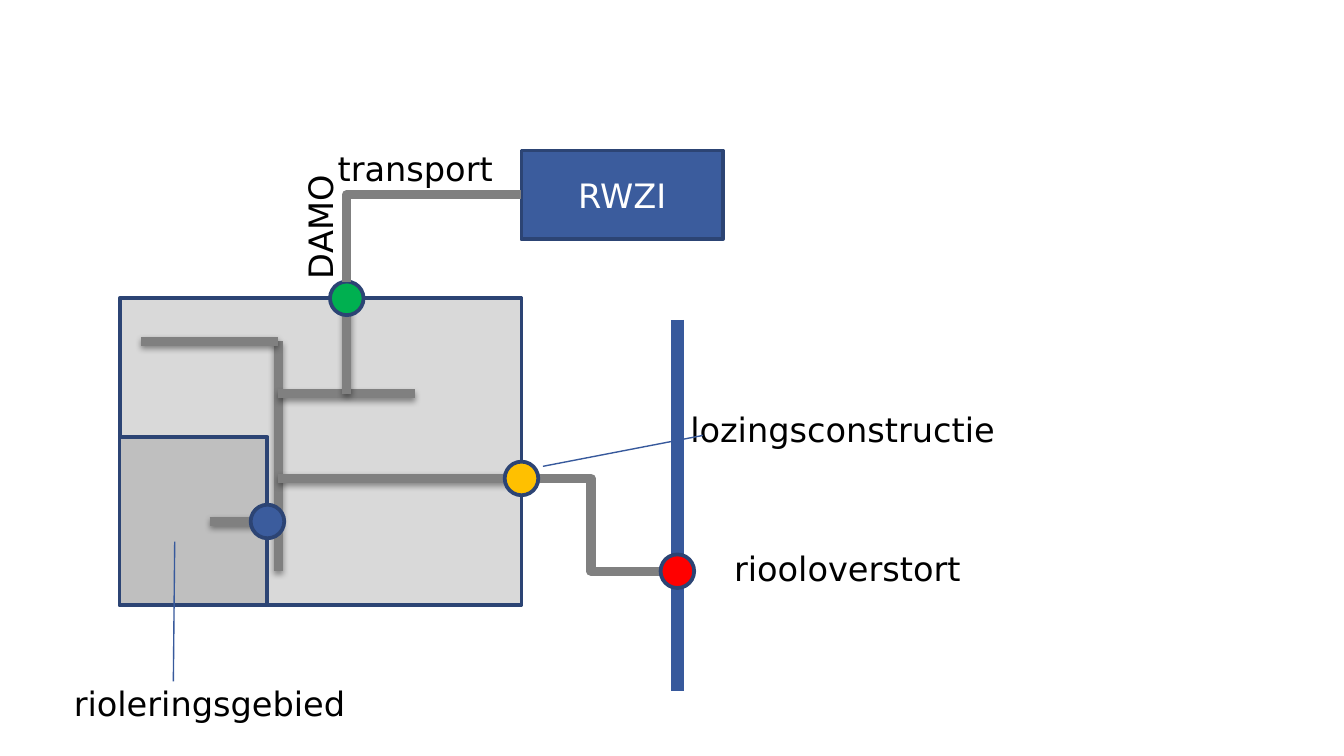
from lxml import etree
from pptx import Presentation
from pptx import util as u
from pptx.dml.color import RGBColor
from pptx.enum import shapes, text
from pptx.oxml.ns import qn

COLOURS = {
    "area": "D9D9D9", "subarea": "BFBFBF", "outline": "2C4474", "pipe": "808080",
    "water": "37599C", "blue": "3B5C9D", "yellow": "FFC000", "red": "FF0000",
    "green": "00B050", "black": "000000", "white": "FFFFFF",
}
FONT = "DejaVu Sans"
NODE_SIZE = 0.25
PIPE_WIDTH = 5


def colour(name):
    """Return the named colour as an RGBColor."""
    return RGBColor.from_string(COLOURS[name])


def write(shape, wording, font_colour):
    """Put one centred line of text in a shape."""
    paragraph = shape.text_frame.paragraphs[0]
    paragraph.text = wording
    paragraph.alignment = text.PP_ALIGN.CENTER
    font = paragraph.runs[0].font
    font.name, font.size = FONT, u.Pt(18)
    font.color.rgb = colour(font_colour)


def add_block(slide, kind, box, fill):
    """Add a filled shape with the dark blue outline."""
    shape = slide.shapes.add_shape(kind, *map(u.Inches, box))
    shape.shadow.inherit = False
    shape.fill.solid()
    shape.fill.fore_color.rgb = colour(fill)
    shape.line.color.rgb = colour("outline")
    shape.line.width = u.Pt(2)
    return shape


def add_node(slide, x, y, fill):
    """Add a round node centred on a point."""
    box = (x - NODE_SIZE / 2, y - NODE_SIZE / 2, NODE_SIZE, NODE_SIZE)
    add_block(slide, shapes.MSO_SHAPE.FLOWCHART_CONNECTOR, box, fill)


def add_line(slide, start, end, line_colour, width, shadow=False,
             kind=shapes.MSO_CONNECTOR.STRAIGHT):
    """Add a connector, with a soft shadow below it if asked."""
    connector = slide.shapes.add_connector(kind, *map(u.Inches, (*start, *end)))
    connector.line.color.rgb = colour(line_colour)
    connector.line.width = u.Pt(width)
    effects = etree.SubElement(connector._element.spPr, qn("a:effectLst"))
    if shadow:
        outer = etree.SubElement(effects, qn("a:outerShdw"), blurRad="40000",
                                 dist="20000", dir="5400000", rotWithShape="0")
        shade = etree.SubElement(outer, qn("a:srgbClr"), val=COLOURS["black"])
        etree.SubElement(shade, qn("a:alpha"), val="38000")
    return connector


def add_label(slide, wording, left, top, width=3, rotation=0):
    """Add a centred text label."""
    label = slide.shapes.add_textbox(*map(u.Inches, (left, top, width, 0.4)))
    label.text_frame.word_wrap = True
    label.rotation = rotation
    write(label, wording, "black")


def add_overflow(slide, left, top, width, height):
    """Draw the pipe from the sewer area to the overflow on the watercourse."""
    water_x = left + width
    pipe_y, overflow_y = top + 1.18, top + 1.87
    add_line(slide, (left, pipe_y), (water_x - NODE_SIZE / 2, overflow_y), "pipe",
             PIPE_WIDTH, kind=shapes.MSO_CONNECTOR.ELBOW)
    add_line(slide, (water_x, top), (water_x, top + height), "water", 7)
    add_node(slide, water_x, overflow_y, "red")
    add_label(slide, "riooloverstort", water_x + 0.02, overflow_y - 0.22, 2.49)


def add_sewer_area(slide, left, top, width, height):
    """Draw the sewer area with its subarea, pipes and nodes."""
    rectangle = shapes.MSO_SHAPE.RECTANGLE
    right, bottom = left + width, top + height
    sub_width, sub_height = 1.1, 1.25
    add_block(slide, rectangle, (left, top, width, height), "area")
    add_block(slide, rectangle,
              (left, bottom - sub_height, sub_width, sub_height), "subarea")
    main_x, outlet_x = left + 1.18, left + 1.69
    upper_y, branch_y, discharge_y, sub_y = (top + dy for dy in (0.32, 0.71, 1.34, 1.66))
    pipes = [
        ((main_x, upper_y), (main_x, bottom - 0.25)),
        ((main_x, discharge_y), (right, discharge_y)),
        ((main_x, branch_y), (main_x + 1.02, branch_y)),
        ((outlet_x, top), (outlet_x, branch_y)),
        ((main_x - 0.51, sub_y), (main_x, sub_y)),
        ((main_x - 1.02, upper_y), (main_x, upper_y)),
    ]
    for start, end in pipes:
        add_line(slide, start, end, "pipe", PIPE_WIDTH, shadow=True)
    add_node(slide, right, discharge_y, "yellow")
    add_node(slide, outlet_x, top, "green")
    add_node(slide, left + sub_width, sub_y, "blue")


def add_treatment_plant(slide, left, top, width, height):
    """Draw the plant and the transport pipe that rises into its left side."""
    plant = add_block(slide, shapes.MSO_SHAPE.RECTANGLE,
                      (left, top, width, height), "blue")
    plant.text_frame.vertical_anchor = text.MSO_ANCHOR.MIDDLE
    write(plant, "RWZI", "white")
    run, rise = 1.3, 0.65
    centre_x, centre_y = left - run / 2, top + height / 2 + rise / 2
    pipe = add_line(slide, (centre_x - rise / 2, centre_y - run / 2),
                    (centre_x + rise / 2, centre_y + run / 2), "pipe", PIPE_WIDTH,
                    kind=shapes.MSO_CONNECTOR.ELBOW)
    properties = pipe._element.spPr
    properties.find(qn("a:prstGeom")).set("prst", "bentConnector2")
    transform = properties.find(qn("a:xfrm"))
    for name, value in (("rot", "5400000"), ("flipH", "1"), ("flipV", "1")):
        transform.set(name, value)
    add_label(slide, "transport", left - 2.29, top - 0.07)
    add_label(slide, "DAMO", left - 3, top + 0.37, rotation=270)


def add_callouts(slide, left, top):
    """Label the sewer area and the discharge structure with leader lines."""
    add_label(slide, "rioleringsgebied", left - 0.83, top + 2.81)
    add_line(slide, (left + 0.41, top + 1.81), (left + 0.4, top + 2.85), "water", 0.75)
    add_label(slide, "lozingsconstructie", left + 3.88, top + 0.77)
    add_line(slide, (left + 3.15, top + 1.25), (left + 4.34, top + 1.02), "water", 0.75)


def main():
    """Build the sewer diagram slide and save it."""
    presentation = Presentation()
    presentation.slide_width = u.Inches(10)
    presentation.slide_height = presentation.slide_width * 9 // 16
    slide = presentation.slides.add_slide(presentation.slide_layouts[6])
    add_overflow(slide, 3.88, 2.38, 1.16, 2.76)
    add_sewer_area(slide, 0.89, 2.22, 2.99, 2.28)
    add_treatment_plant(slide, 3.88, 1.12, 1.5, 0.66)
    add_callouts(slide, 0.89, 2.22)
    presentation.save("out.pptx")


if __name__ == "__main__":
    main()
